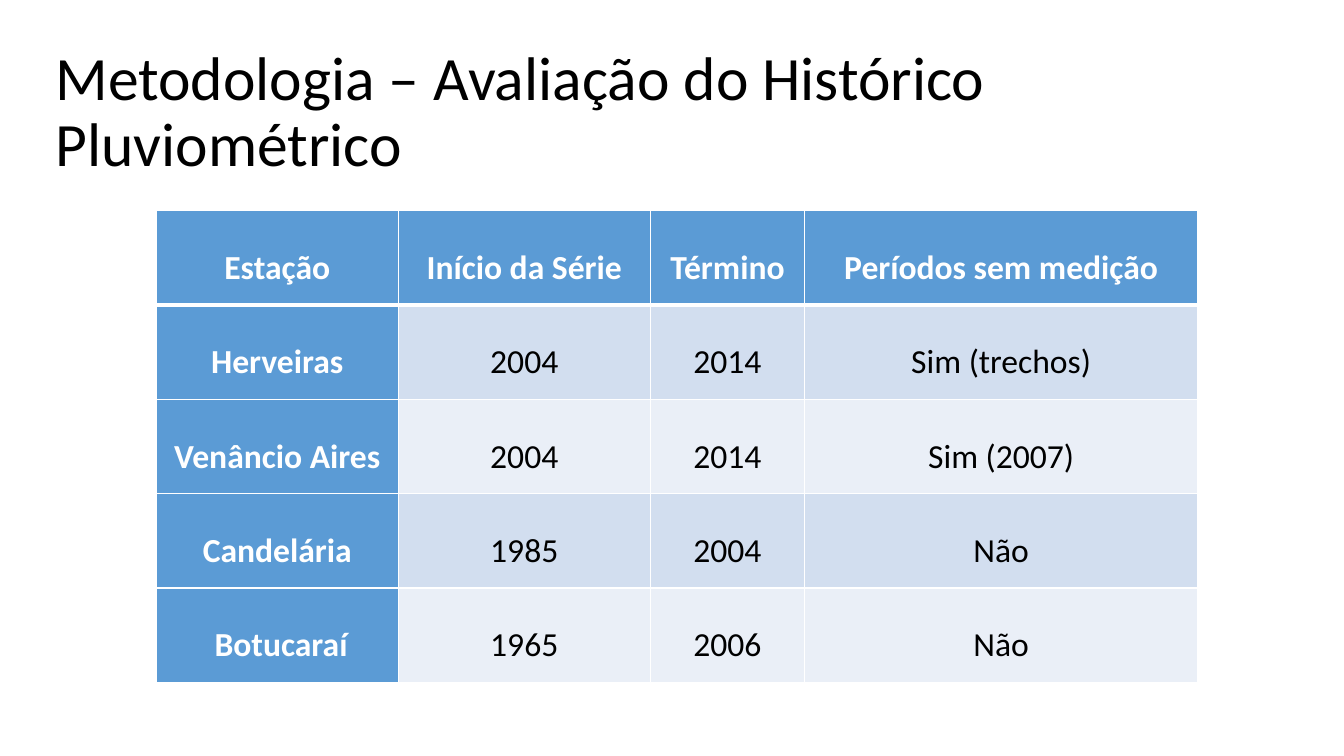
from lxml.etree import SubElement
from pptx import Presentation
from pptx.dml.color import RGBColor
from pptx.enum.text import MSO_ANCHOR, PP_ALIGN
from pptx.oxml.ns import qn
from pptx.util import Inches, Pt

FONT = "Calibri"
BLUE, BAND_DARK, BAND_LIGHT = "5B9BD5", "D2DEEF", "EAEFF7"
WHITE, BLACK = "FFFFFF", "000000"

TITLE = "Metodologia – Avaliação do Histórico Pluviométrico"
STATIONS = [
    ["Estação", "Início da Série", "Término", "Períodos sem medição"],
    ["Herveiras", "2004", "2014", "Sim (trechos)"],
    ["Venâncio Aires", "2004", "2014", "Sim (2007)"],
    ["Candelária", "1985", "2004", "Não"],
    [" Botucaraí", "1965", "2006", "Não"],
]
COLUMN_WIDTHS = [2.4, 2.5, 1.53, 3.9]


def rgb(color):
    return RGBColor.from_string(color)


def style_text(p, size, color, bold=False):
    for r in p.runs:
        r.font.name, r.font.size, r.font.bold = FONT, Pt(size), bold
        r.font.color.rgb = rgb(color)


def add_border(cell, side, width):
    tc_pr = cell._tc.get_or_add_tcPr()
    line = SubElement(tc_pr, qn(f"a:ln{side}"), w=str(Pt(width)))
    fill = SubElement(line, qn("a:solidFill"))
    SubElement(fill, qn("a:srgbClr"), val=WHITE)


def place_title(s, left, top, width, height):
    sp = s.shapes.title
    sp.left, sp.top, sp.width, sp.height = map(Inches, (left, top, width, height))
    tf = sp.text_frame
    tf.text = TITLE
    tf.word_wrap = True
    tf.vertical_anchor = MSO_ANCHOR.MIDDLE
    p = tf.paragraphs[0]
    p.alignment = PP_ALIGN.LEFT
    p.line_spacing = 0.9
    style_text(p, 44, BLACK)


def format_cell(cell, text, row, col):
    is_heading = row == 0 or col == 0
    cell.text = text
    cell.vertical_anchor = MSO_ANCHOR.MIDDLE
    cell.margin_left = cell.margin_right = Inches(0.05)
    cell.margin_top = cell.margin_bottom = 0
    p = cell.text_frame.paragraphs[0]
    p.alignment = PP_ALIGN.CENTER
    p.line_spacing = 1.5
    style_text(p, 24, WHITE if is_heading else BLACK, is_heading)

    # Thick rule between the header and the data; borders precede the fill
    for side in "LRTB":
        header_rule = (row, side) in ((0, "B"), (1, "T"))
        add_border(cell, side, 3 if header_rule else 1)
    band = BAND_DARK if row % 2 else BAND_LIGHT
    cell.fill.solid()
    cell.fill.fore_color.rgb = rgb(BLUE if is_heading else band)


def add_station_table(s, left, top, width, height):
    frame = s.shapes.add_table(len(STATIONS), len(COLUMN_WIDTHS),
                               *map(Inches, (left, top, width, height)))
    table = frame.table
    table.first_col = True
    for column, share in zip(table.columns, COLUMN_WIDTHS):
        column.width = Inches(width * share / sum(COLUMN_WIDTHS))
    for row, values in enumerate(STATIONS):
        for col, text in enumerate(values):
            format_cell(table.cell(row, col), text, row, col)


def main():
    prs = Presentation()
    prs.slide_width, prs.slide_height = Inches(13.33), Inches(7.5)
    s = prs.slides.add_slide(prs.slide_layouts[5])  # Title Only
    place_title(s, 0.45, 0.4, 12.25, 1.45)
    add_station_table(s, 1.55, 2.09, 10.33, 4.68)
    prs.save("out.pptx")


if __name__ == "__main__":
    main()
